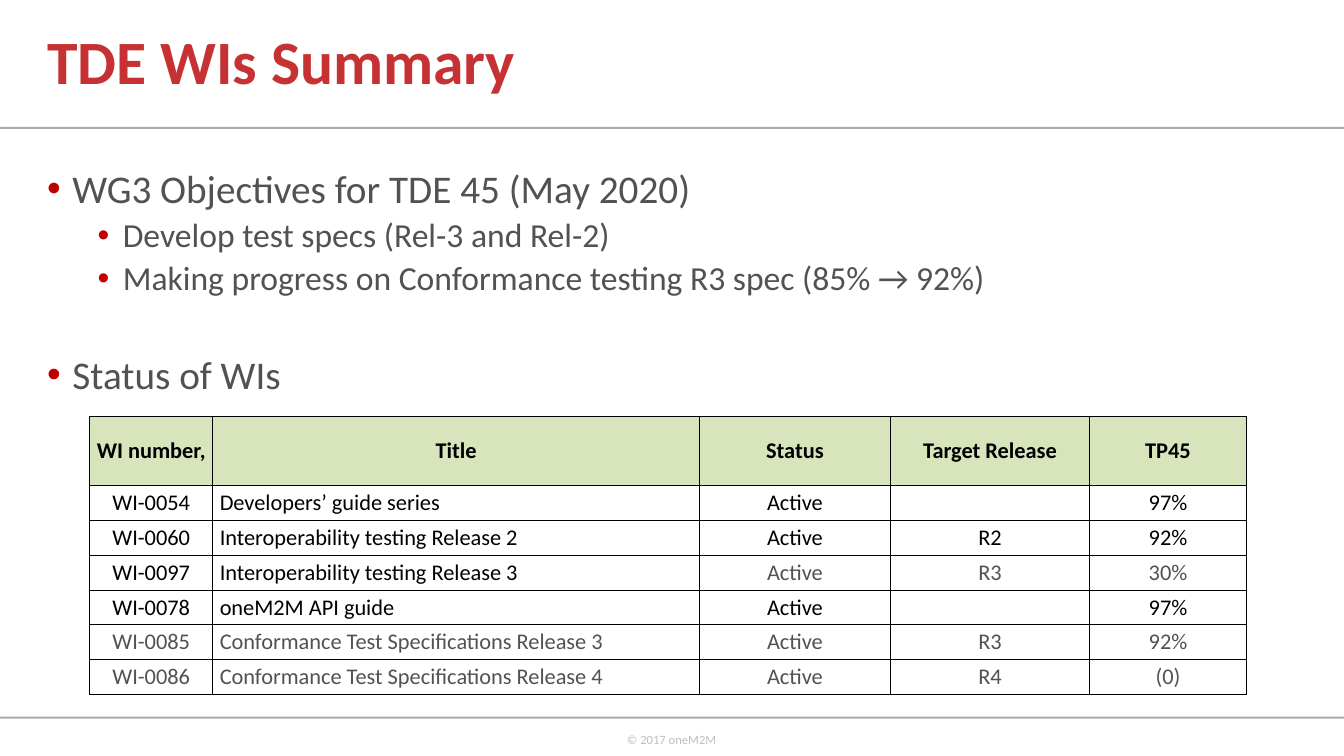
from dataclasses import dataclass

from lxml import etree
from pptx import Presentation
from pptx import util as u
from pptx.dml.color import RGBColor
from pptx.enum import shapes, text
from pptx.oxml.ns import qn


@dataclass(frozen=True)
class Theme:
    font: str = "Calibri"
    red: str = "C63133"
    dot: str = "C00000"
    gray: str = "545054"
    pale: str = "BFBFBF"
    rule: str = "A7A9AC"
    black: str = "000000"
    white: str = "FFFFFF"
    green: str = "D8E4BC"
    title: int = 44
    main: int = 28
    sub: int = 24
    cell: int = 16
    foot: int = 9


theme = Theme()


def write(para, words, size, color, bold=False, align=None, before=0, line=None, indent=None):
    """Fill a paragraph; an indent also gives it a hanging bullet."""
    if indent is not None:
        props = para._p.get_or_add_pPr()
        props.set("marL", str(u.Inches(indent)))
        props.set("indent", str(u.Inches(-0.25)))
        tint = etree.SubElement(props, qn("a:buClr"))
        etree.SubElement(tint, qn("a:srgbClr"), val=theme.dot)
        etree.SubElement(props, qn("a:buFont"), typeface="Arial")
        etree.SubElement(props, qn("a:buChar"), char="•")
    para.alignment = align
    if before:
        para.space_before = u.Pt(before)
    if line:
        para.line_spacing = line
    run = para.add_run() if words else para
    if words:
        run.text = words
    run.font.name = theme.font
    run.font.size = u.Pt(size)
    run.font.bold = bold
    run.font.color.rgb = RGBColor.from_string(color)


def edge(cell):
    """Draw a thin black border on all four sides of a cell."""
    props = cell._tc.get_or_add_tcPr()
    for side in ("lnL", "lnR", "lnT", "lnB"):
        line = etree.SubElement(props, qn(f"a:{side}"), w=str(u.Pt(1)))
        fill = etree.SubElement(line, qn("a:solidFill"))
        etree.SubElement(fill, qn("a:srgbClr"), val=theme.black)


deck = Presentation()
deck.slide_width = u.Inches(13.33)
deck.slide_height = u.Inches(7.5)
slide = deck.slides.add_slide(deck.slide_layouts[6])

# Rules
for top in (1.26, 7.11):
    bar = slide.shapes.add_shape(
        shapes.MSO_SHAPE.RECTANGLE, 0, u.Inches(top), deck.slide_width, u.Inches(0.02))
    bar.shadow.inherit = False
    bar.fill.solid()
    bar.fill.fore_color.rgb = RGBColor.from_string(theme.rule)
    bar.line.fill.background()

# Footer
foot = slide.shapes.add_textbox(
    u.Inches(6.12), u.Inches(7.21), u.Inches(1.1), u.Inches(0.4)).text_frame
foot.word_wrap = False
write(foot.paragraphs[0], "© 2017 oneM2M", theme.foot, theme.pale)

# Title
head = slide.shapes.add_textbox(
    u.Inches(0.37), 0, u.Inches(8.59), u.Inches(1.28)).text_frame
head.word_wrap = True
head.vertical_anchor = text.MSO_ANCHOR.MIDDLE
write(head.paragraphs[0], "TDE WIs Summary", theme.title, theme.red, bold=True, line=0.9)

# Bullets: words, size, indent, space before
points = [
    ("WG3 Objectives for TDE 45 (May 2020)", theme.main, 0.25, 0),
    ("Develop test specs (Rel-3 and Rel-2)", theme.sub, 0.75, 5),
    ("Making progress on Conformance testing R3 spec (85% → 92%)", theme.sub, 0.75, 5),
    ("Status of WIs", theme.main, 0.25, 41),
]
body = slide.shapes.add_textbox(
    u.Inches(0.37), u.Inches(1.63), u.Inches(11.5), u.Inches(4.76)).text_frame
body.word_wrap = True
for i, (words, size, indent, before) in enumerate(points):
    para = body.add_paragraph() if i else body.paragraphs[0]
    para.level = int(indent > 0.5)
    write(para, words, size, theme.gray, before=before, line=0.9, indent=indent)

# Table: each row ends with the column where its gray text starts
items = [
    ("WI number, ", "Title", "Status", "Target Release", "TP45", 5),
    ("WI-0054", "Developers’\u00a0guide series", "Active", "", "97%", 5),
    ("WI-0060", "Interoperability testing Release 2", "Active", "R2", "92%", 5),
    ("WI-0097", "Interoperability testing Release 3", "Active", "R3", "30%", 2),
    ("WI-0078", "oneM2M API guide", "Active", "", "97%", 5),
    ("WI-0085", "Conformance Test Specifications Release 3", "Active", "R3", "92%", 0),
    ("WI-0086", "Conformance Test Specifications Release 4", "Active", "R4", "(0)", 0),
]
widths = (1.22, 4.83, 1.89, 1.98, 1.55)
grid = slide.shapes.add_table(
    len(items), len(widths), u.Inches(0.89), u.Inches(4.13),
    u.Inches(sum(widths)), u.Inches(2.76)).table
grid.horz_banding = False
for col, width in zip(grid.columns, widths):
    col.width = u.Inches(width)
for r, (*cells, gray) in enumerate(items):
    grid.rows[r].height = u.Inches(0.345 if r else 0.69)
    for c, words in enumerate(cells):
        cell = grid.cell(r, c)
        edge(cell)
        cell.fill.solid()
        cell.fill.fore_color.rgb = RGBColor.from_string(theme.white if r else theme.green)
        cell.margin_left = cell.margin_right = u.Inches(0.07)
        cell.margin_top = cell.margin_bottom = 0
        cell.vertical_anchor = text.MSO_ANCHOR.MIDDLE
        left = r > 0 and c == 1
        write(cell.text_frame.paragraphs[0], words, theme.cell,
              theme.gray if c >= gray else theme.black, bold=r == 0,
              align=text.PP_ALIGN.LEFT if left else text.PP_ALIGN.CENTER)

deck.save("out.pptx")
